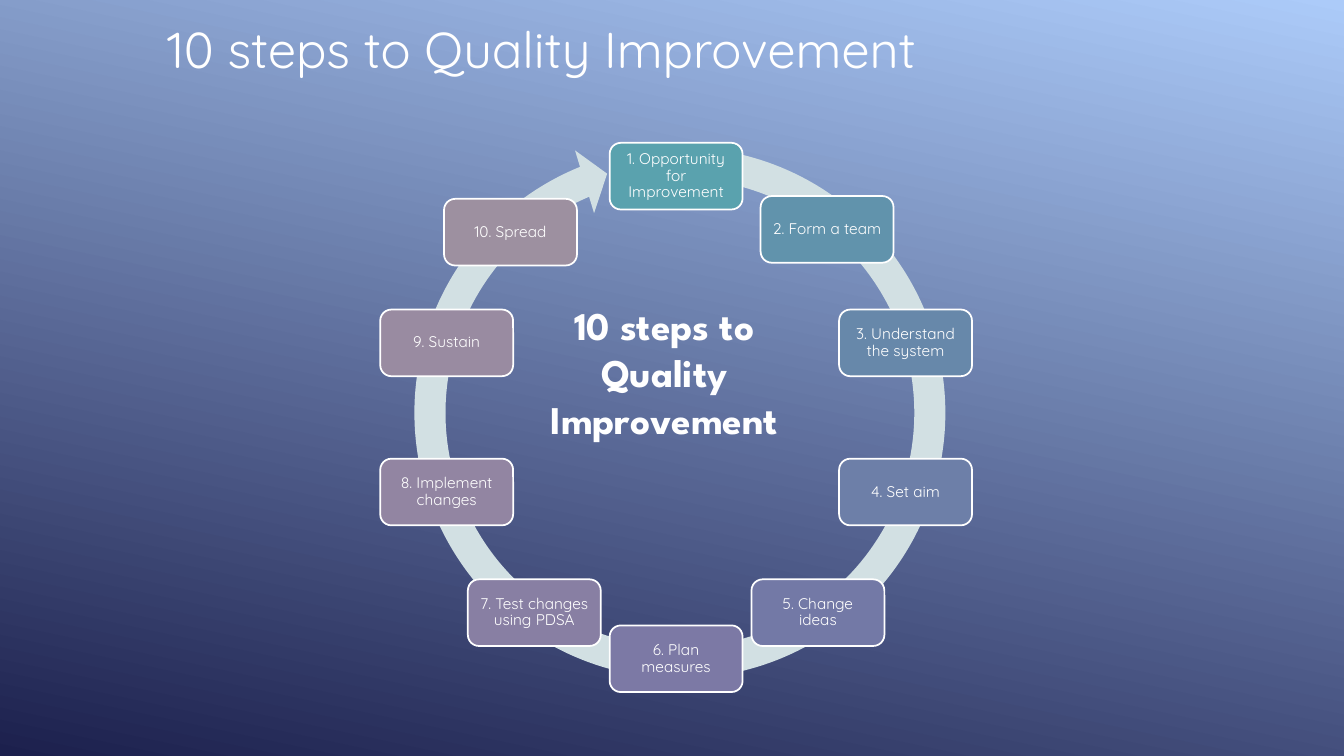
from math import cos, radians, sin

from lxml import etree
from pptx import Presentation
from pptx.dml.color import RGBColor
from pptx.enum.shapes import MSO_SHAPE
from pptx.enum.text import MSO_ANCHOR, MSO_AUTO_SIZE, PP_ALIGN
from pptx.util import Cm, Pt

ROUNDED = MSO_SHAPE.ROUNDED_RECTANGLE
CIRCULAR_ARROW = MSO_SHAPE.CIRCULAR_ARROW
TOP, MIDDLE = MSO_ANCHOR.TOP, MSO_ANCHOR.MIDDLE
LEFT, CENTER = PP_ALIGN.LEFT, PP_ALIGN.CENTER
FIT_SHAPE = MSO_AUTO_SIZE.SHAPE_TO_FIT_TEXT
TITLE_ONLY = 5

BODY_FONT, DISPLAY_FONT = "Quicksand", "League Spartan"
WHITE, RING_COLOUR = "FFFFFF", "D2E0E3"
BACKGROUND = ("ACCBF9", "1C204D")
HEADING = "10 steps to Quality Improvement"

STEPS = [
    ("1. Opportunity for Improvement", "5AA2AE"),
    ("2. Form a team", "6193AC"),
    ("3. Understand the system", "6788AA"),
    ("4. Set aim", "6D7FA8"),
    ("5. Change ideas", "7379A6"),
    ("6. Plan measures", "7C79A5"),
    ("7. Test changes using PDSA", "887FA3"),
    ("8. Implement changes", "9285A2"),
    ("9. Sustain", "998BA1"),
    ("10. Spread", "9D90A0"),
]

# Cycle geometry in centimetres
CENTRE_X, CENTRE_Y, RADIUS = 17.04, 10.52, 6.08
STEP_WIDTH, STEP_HEIGHT = 3.35, 1.68
# Steps (by index) that sit slightly off the circle
NUDGES = {1: (0.23, 0.18), 9: (-0.6, 0.25)}


def colour(value):
    return RGBColor.from_string(value)


def write(frame, text, font=BODY_FONT, size=11, bold=False, align=CENTER,
          anchor=TOP, spacing=None, inset=None):
    frame.word_wrap = True
    frame.vertical_anchor = anchor
    if inset is not None:
        frame.margin_left = frame.margin_right = Cm(inset)
        frame.margin_top = frame.margin_bottom = Cm(inset)
    para = frame.paragraphs[0]
    para.alignment = align
    para.line_spacing = spacing
    span = para.add_run()
    span.text = text
    span.font.name = font
    span.font.size = Pt(size)
    span.font.bold = bold
    span.font.color.rgb = colour(WHITE)


def add_filled(page, kind, left, top, width, height, fill, line=None):
    shape = page.shapes.add_shape(kind, Cm(left), Cm(top), Cm(width), Cm(height))
    shape.shadow.inherit = False
    shape.fill.solid()
    shape.fill.fore_color.rgb = colour(fill)
    if line:
        shape.line.color.rgb = colour(line)
        shape.line.width = Pt(1.25)
    else:
        shape.line.fill.background()
    return shape


def paint_background(page):
    fill = page.background.fill
    fill.gradient()
    fill.gradient_angle = 258
    for stop, value in zip(fill.gradient_stops, BACKGROUND):
        stop.color.rgb = colour(value)


def add_title(page):
    title = page.shapes.title
    title.left, title.top = Cm(3.63), Cm(0.33)
    title.width, title.height = Cm(24.56), Cm(1.8)
    frame = title.text_frame
    write(frame, HEADING, size=36, align=LEFT, spacing=1.0)
    frame.margin_left = Cm(0.58)
    frame.auto_size = FIT_SHAPE


def add_ring(page):
    ring = add_filled(page, CIRCULAR_ARROW, 10.01, 3.28, 14.25, 14.25, RING_COLOUR)
    for index, value in enumerate((0.055, 3.307, 148.546, 167.585, 0.058)):
        ring.adjustments[index] = value


def add_step(page, index, label, fill):
    angle = radians(index * 360 / len(STEPS))
    shift_x, shift_y = NUDGES.get(index, (0, 0))
    left = CENTRE_X + RADIUS * sin(angle) + shift_x - STEP_WIDTH / 2
    top = CENTRE_Y - RADIUS * cos(angle) + shift_y - STEP_HEIGHT / 2
    box = add_filled(page, ROUNDED, left, top, STEP_WIDTH, STEP_HEIGHT, fill, WHITE)
    write(box.text_frame, label, anchor=MIDDLE, spacing=0.9, inset=0.2)


def add_centre_text(page):
    box = page.shapes.add_textbox(Cm(12.78), Cm(7.47), Cm(7.92), Cm(3.84))
    write(box.text_frame, HEADING, font=DISPLAY_FONT, size=28, bold=True)
    box.text_frame.auto_size = FIT_SHAPE


def main():
    deck = Presentation()
    deck.slide_width, deck.slide_height = Cm(33.87), Cm(19.05)
    page = deck.slides.add_slide(deck.slide_layouts[TITLE_ONLY])

    paint_background(page)
    add_title(page)

    # Cycle: ring behind, steps on top
    add_ring(page)
    for index, (label, fill) in enumerate(STEPS):
        add_step(page, index, label, fill)
    add_centre_text(page)

    deck.save("out.pptx")


if __name__ == "__main__":
    main()
